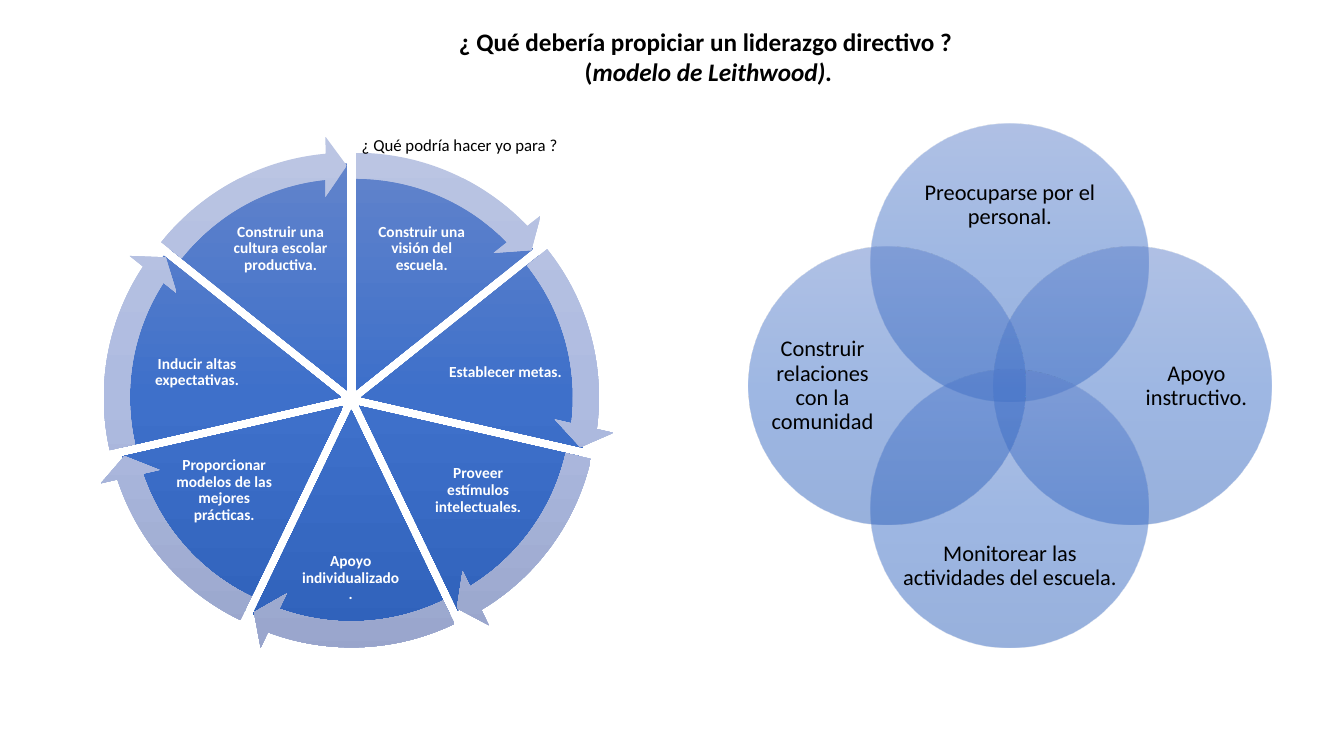
"""Build the leadership slide: a wheel of seven steps beside four crossing circles."""
from copy import deepcopy
from math import cos, radians, sin

from lxml import etree
from pptx import Presentation
from pptx.dml.color import RGBColor
from pptx.enum.shapes import MSO_SHAPE
from pptx.enum.text import MSO_ANCHOR, MSO_AUTO_SIZE, PP_ALIGN
from pptx.oxml.ns import qn
from pptx.util import Pt

PIE, ARROW, OVAL = MSO_SHAPE.PIE, MSO_SHAPE.CIRCULAR_ARROW, MSO_SHAPE.OVAL
TOP, MIDDLE = MSO_ANCHOR.TOP, MSO_ANCHOR.MIDDLE
LEFT, CENTER = PP_ALIGN.LEFT, PP_ALIGN.CENTER
FIXED = MSO_AUTO_SIZE.NONE

DEEP = ["6183CB", "3E70CA", "3062BB"]
PALE = ["BBC5E3", "AEBBE0", "98A4CB"]
SIDES = ["margin_left", "margin_top", "margin_right", "margin_bottom"]


def disc(group, kind, x, y, size, hues, alpha=None):
    """Draw a round shape centred on x, y with a downward gradient."""
    shape = group.shapes.add_shape(
        kind, Pt(x - size / 2), Pt(y - size / 2), Pt(size), Pt(size))
    shape.shadow.inherit = False
    shape.line.fill.background()
    shape.fill.gradient()
    shape.fill.gradient_angle = 270
    stops = shape._element.spPr.find(".//" + qn("a:gsLst"))
    stops.insert(1, deepcopy(stops[0]))
    for i, stop in enumerate(shape.fill.gradient_stops):
        stop.position = i / 2
        stop.color.rgb = RGBColor.from_string(hues[i])
        if alpha:
            etree.SubElement(stops[i][0], qn("a:alpha"), val=str(alpha * 1000))
    return shape


def write(box, lines, inset, anchor, align, space, hue, **style):
    """Fill a box with lines, each a list of (text, extra format) runs."""
    frame = box.text_frame
    look = {"word_wrap": True, "auto_size": FIXED, "vertical_anchor": anchor}
    look.update(zip(SIDES, map(Pt, inset)))
    for key, value in look.items():
        setattr(frame, key, value)
    for i, line in enumerate(lines):
        para = frame.add_paragraph() if i else frame.paragraphs[0]
        para.alignment = align
        para.line_spacing = space
        for text, extra in line:
            run = para.add_run()
            run.text = text
            run.font.color.rgb = RGBColor.from_string(hue)
            for key, value in {"name": "Calibri", **style, **extra}.items():
                setattr(run.font, key, value)


deck = Presentation()
deck.slide_width, deck.slide_height = Pt(960), Pt(540)
slide = deck.slides.add_slide(deck.slide_layouts[5])

title = slide.shapes.title
place = {"left": 172.8, "top": 15.1, "width": 666.7, "height": 51.1}
for key, value in place.items():
    setattr(title, key, Pt(value))
heading = [
    [("¿ Qué debería propiciar un liderazgo directivo ? ", {})],
    [("(", {}), ("modelo de Leithwood).", {"italic": True})],
]
write(title, heading, (7.2, 3.6, 7.2, 3.6), TOP, CENTER, 1.0, "000000",
      size=Pt(18), bold=True)

steps = [
    ("Construir una visión del escuela.", 262.8, 146.9, 77, 61.9),
    ("Establecer metas.", 316.8, 239, 88.6, 54),
    ("Proveer estímulos intelectuales.", 303.1, 320.4, 77, 59.8),
    ("Apoyo individualizado.", 213.1, 385.9, 74.9, 54),
    ("Proporcionar modelos de las mejores prácticas.", 121.7, 320.4, 77, 59.8),
    ("Inducir altas expectativas.", 96.5, 239, 88.6, 54),
    ("Construir una cultura escolar productiva.", 162, 146.9, 77, 61.9),
]
wheel = slide.shapes.add_group_shape()
turn = 360 / len(steps)
rings = []
for i, (text, *area) in enumerate(steps):
    start = 270 + i * turn
    mid = radians(start + turn / 2)
    x, y = 251 + 7.4 * cos(mid), 285.4 + 7.4 * sin(mid)
    first, last = start % 360 * 0.6, (start + turn) % 360 * 0.6
    wedge = disc(wheel, PIE, x, y, 324, DEEP)
    wedge.adjustments[0], wedge.adjustments[1] = first, last
    label = wheel.shapes.add_textbox(*map(Pt, area))
    write(label, [[(text, {})]], [1.4] * 4, MIDDLE, CENTER, 0.9, "FFFFFF",
          size=Pt(11), bold=True)
    rings.append((x, y, (0.051, 3.275, last - 3.28, first, 0.059)))
for x, y, bends in rings:
    ring = disc(wheel, ARROW, x, y, 363.6, PALE)
    for i, bend in enumerate(bends):
        ring.adjustments[i] = bend

themes = [
    ("Preocuparse por el personal.", 0, -1, 645.1, 115.2, 152.6, 62.6),
    ("Apoyo instructivo.", 1, 0, 816.5, 199.4, 76.3, 152.6),
    ("Monitorear las actividades del escuela.", 0, 1, 645.1, 373, 152.6, 62.6),
    ("Construir relaciones con la comunidad", -1, 0, 549.4, 199.4, 76.3, 152.6),
]
venn = slide.shapes.add_group_shape()
for text, across, down, *area in themes:
    disc(venn, OVAL, 721.1 + 87.8 * across, 275.4 + 87.8 * down, 198, DEEP, 50)
    label = venn.shapes.add_textbox(*map(Pt, area))
    write(label, [[(text, {})]], [0] * 4, MIDDLE, CENTER, 0.9, "000000",
          size=Pt(16))

prompt = slide.shapes.add_textbox(Pt(251.3), Pt(92.9), Pt(236.9), Pt(21.6))
write(prompt, [[("¿ Qué podría hacer yo para ?", {})]], (7.2, 3.6, 7.2, 3.6),
      TOP, LEFT, 1.0, "000000", size=Pt(12))

deck.save("out.pptx")
